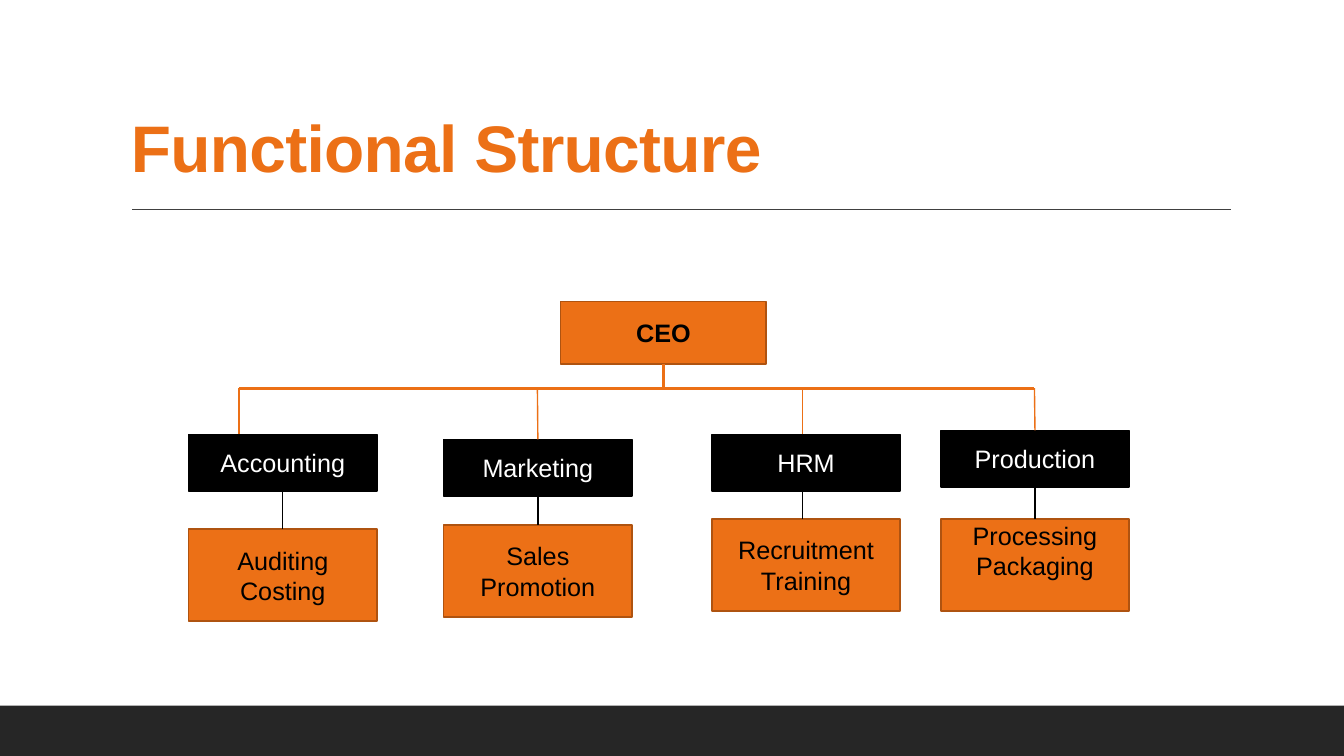
"""Build the Functional Structure organisation chart slide."""
from pptx import Presentation
from pptx.dml.color import RGBColor
from pptx.enum import shapes, text
from pptx.oxml.ns import qn
from pptx.util import Inches, Pt

ORANGE = RGBColor(0xEC, 0x70, 0x16)
RUST = RGBColor(0xAF, 0x53, 0x10)
BLACK = RGBColor(0, 0, 0)
WHITE = RGBColor(0xFF, 0xFF, 0xFF)
CHARCOAL = RGBColor(0x26, 0x26, 0x26)
GREY = RGBColor(0x40, 0x40, 0x40)

prs = Presentation()
prs.slide_width, prs.slide_height = Inches(13.33), Inches(7.5)
s = prs.slides.add_slide(prs.slide_layouts[6])


def add_text(content, at, fill=None, line=None, color=BLACK, size=18, bold=False,
             align=text.PP_ALIGN.CENTER, anchor=text.MSO_ANCHOR.MIDDLE,
             top=0.05, spacing=None, tracking=None):
    box = [Inches(v) for v in at]
    if fill is None:
        sp = s.shapes.add_textbox(*box)
    else:
        sp = s.shapes.add_shape(shapes.MSO_SHAPE.RECTANGLE, *box)
        sp.shadow.inherit = False
        sp.fill.solid()
        sp.fill.fore_color.rgb = fill
        if line is None:
            sp.line.fill.background()
        else:
            sp.line.color.rgb = line
            sp.line.width = Pt(1.25)
    tf = sp.text_frame
    tf.word_wrap = True
    tf.vertical_anchor = anchor
    tf.margin_top = Inches(top)
    for i, words in enumerate(content):
        p = tf.add_paragraph() if i else tf.paragraphs[0]
        p.alignment = align
        p.line_spacing = spacing
        r = p.add_run()
        r.text = words
        r.font.name, r.font.size, r.font.bold = "Arial", Pt(size), bold
        r.font.color.rgb = color
        if tracking:
            r.font._element.set("spc", str(tracking))
    return sp


def add_line(x1, y1, x2, y2, color, width=1, start=None, end=None):
    cx = s.shapes.add_connector(shapes.MSO_CONNECTOR.STRAIGHT,
                                *[Inches(v) for v in (x1, y1, x2, y2)])
    cx.line.color.rgb = color
    cx.line.width = Pt(width)
    props = cx._element.spPr
    props.append(props.makeelement(qn("a:effectLst"), {}))
    if start is not None:
        cx.begin_connect(start, 2)
    if end is not None:
        cx.end_connect(end, 0)


add_text([], (0, 7, 13.33, 0.5), fill=CHARCOAL)
add_line(1.31, 2.08, 12.21, 2.08, GREY)
add_text(["Functional Structure"], (1.2, 0.31, 11, 1.59), color=ORANGE, size=47,
         bold=True, align=text.PP_ALIGN.LEFT, anchor=text.MSO_ANCHOR.BOTTOM,
         spacing=0.9, tracking=-50)

BUS_Y = 3.85
BOX_W, HEAD_H, TASK_H = 1.87, 0.56, 0.91
ceo = add_text(["CEO"], (5.56, 2.99, 2.04, 0.62), fill=ORANGE, line=RUST, bold=True)

MIDDLE = {}
RAISED = {"anchor": text.MSO_ANCHOR.TOP, "top": 0.01}
departments = [
    ("Accounting", ["Auditing", "Costing"], 1.87, 4.31, 5.25, 2.37, 2.8, MIDDLE),
    ("Marketing", ["Sales", "Promotion"], 4.4, 4.36, 5.21, 5.33, 5.33, MIDDLE),
    ("HRM", ["Recruitment", "Training"], 7.06, 4.31, 5.15, 7.96, 7.96, MIDDLE),
    ("Production", ["Processing", "Packaging"], 9.33, 4.27, 5.15, 10.26, 10.26, RAISED),
]
for name, tasks, x, head_y, task_y, drop_x, link_x, placing in departments:
    head = add_text([name], (x, head_y, BOX_W, HEAD_H), fill=BLACK, line=BLACK, color=WHITE)
    task = add_text(tasks, (x, task_y, BOX_W, TASK_H), fill=ORANGE, line=RUST, **placing)
    centre = x + BOX_W / 2
    drop_joins = abs(drop_x - centre) < 0.02
    link_joins = abs(link_x - centre) < 0.02
    add_line(drop_x, BUS_Y, drop_x, head_y, ORANGE, end=head if drop_joins else None)
    add_line(link_x, head_y + HEAD_H, link_x, task_y, BLACK,
             start=head if link_joins else None, end=task if link_joins else None)

add_line(departments[0][5], BUS_Y, departments[-1][5], BUS_Y, ORANGE, 2.25)
add_line(6.58, 3.61, 6.58, BUS_Y, ORANGE, 2.25, start=ceo)

prs.save("out.pptx")
